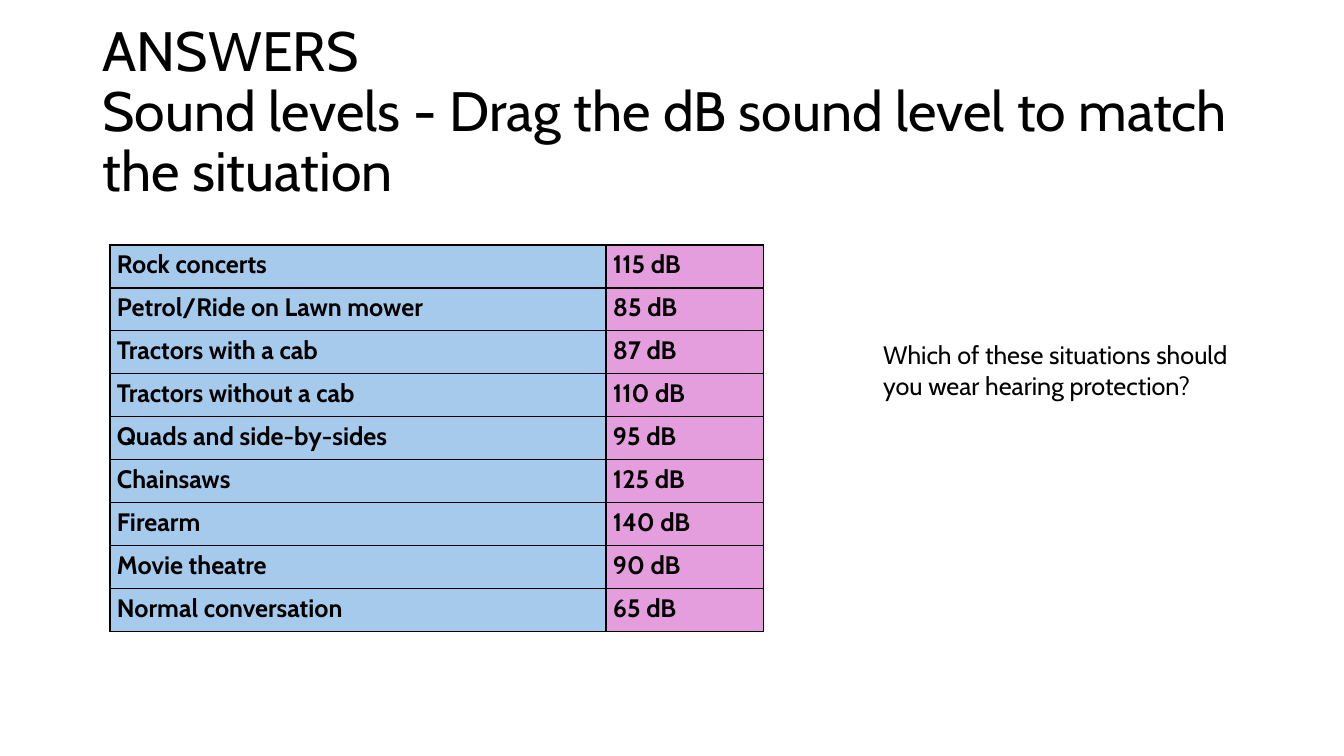
from dataclasses import dataclass

from lxml import etree
from pptx import Presentation
from pptx.dml.color import RGBColor
from pptx.enum.text import MSO_ANCHOR
from pptx.oxml.ns import qn
from pptx.util import Inches, Pt

MIDDLE, TOP = MSO_ANCHOR.MIDDLE, MSO_ANCHOR.TOP


@dataclass(frozen=True)
class Theme:
    font: str = "Cabin"
    ink: str = "000000"
    situation_fill: str = "A6CAEC"
    level_fill: str = "E59EDD"
    title_size: float = 39.6
    body_size: float = 18
    border_width: float = 1


THEME = Theme()

TITLE = "ANSWERS\vSound levels - Drag the dB sound level to match the situation"
QUESTION = "Which of these situations should you wear hearing protection?"
SOUND_LEVELS = [
    ("Rock concerts", 115),
    ("Petrol/Ride on Lawn mower", 85),
    ("Tractors with a cab", 87),
    ("Tractors without a cab", 110),
    ("Quads and side-by-sides", 95),
    ("Chainsaws", 125),
    ("Firearm", 140),
    ("Movie theatre", 90),
    ("Normal conversation", 65),
]


def write(frame, text, size, bold=False, line_spacing=1.0):
    frame.text = text
    paragraph = frame.paragraphs[0]
    paragraph.line_spacing = line_spacing
    for run in paragraph.runs:
        run.font.name = THEME.font
        run.font.size = Pt(size)
        run.font.bold = bold
        run.font.color.rgb = RGBColor.from_string(THEME.ink)
    return paragraph


def add_text(slide, box, text, size, anchor=TOP, line_spacing=1.0):
    frame = slide.shapes.add_textbox(*map(Inches, box)).text_frame
    frame.word_wrap = True
    frame.vertical_anchor = anchor
    write(frame, text, size, line_spacing=line_spacing)


def add_borders(cell):
    """Draw all four sides of the cell; the lines must precede its fill."""
    properties = cell._tc.get_or_add_tcPr()
    for position, side in enumerate(("a:lnL", "a:lnR", "a:lnT", "a:lnB")):
        line = etree.Element(qn(side), w=str(Pt(THEME.border_width)))
        fill = etree.SubElement(line, qn("a:solidFill"))
        etree.SubElement(fill, qn("a:srgbClr"), val=THEME.ink)
        properties.insert(position, line)


def fill_cell(cell, text, color):
    cell.margin_left = cell.margin_right = Inches(0.07)
    cell.margin_top = cell.margin_bottom = 0
    cell.fill.solid()
    cell.fill.fore_color.rgb = RGBColor.from_string(color)
    paragraph = write(cell.text_frame, text, THEME.body_size, bold=True, line_spacing=1.15)
    paragraph.space_after = Pt(6)
    add_borders(cell)


def add_sound_table(slide, box):
    left, top, width, height = box
    level_width = 1.56
    table = slide.shapes.add_table(len(SOUND_LEVELS), 2, *map(Inches, box)).table
    table.first_row = table.horz_banding = False
    table.columns[0].width = Inches(width - level_width)
    table.columns[1].width = Inches(level_width)
    for index, (situation, decibels) in enumerate(SOUND_LEVELS):
        table.rows[index].height = Inches(height / len(SOUND_LEVELS))
        fill_cell(table.cell(index, 0), situation, THEME.situation_fill)
        fill_cell(table.cell(index, 1), f"{decibels} dB", THEME.level_fill)


def main():
    deck = Presentation()
    deck.slide_width, deck.slide_height = Inches(13.33), Inches(7.5)
    slide = deck.slides.add_slide(deck.slide_layouts[6])
    add_text(slide, (0.92, 0.4, 11.5, 1.45), TITLE, THEME.title_size, MIDDLE, 0.9)
    add_sound_table(slide, (1.09, 2.43, 6.48, 3.84))
    add_text(slide, (8.66, 3.32, 3.89, 0.71), QUESTION, THEME.body_size)
    deck.save("out.pptx")


if __name__ == "__main__":
    main()
